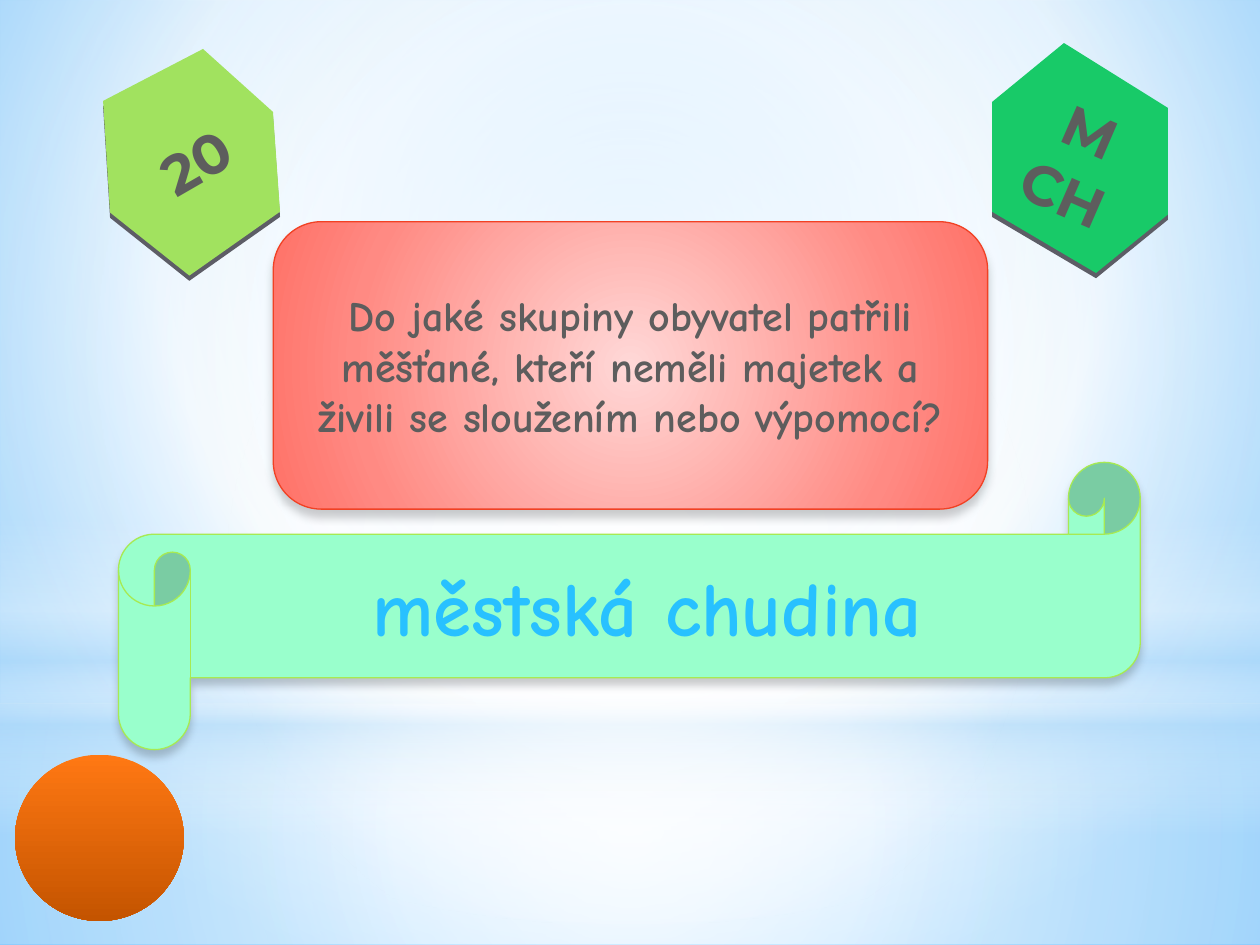
from typing import NamedTuple, Optional

from lxml import etree
from pptx import Presentation
from pptx.dml.color import RGBColor
from pptx.enum import shapes, text
from pptx.oxml import ns
from pptx.util import Pt

A = "http://schemas.openxmlformats.org/drawingml/2006/main"
SHAPE = shapes.MSO_SHAPE
GREY = "5D5D5D"
EDGE = "5D5D66"
EDGE_DEPTH = 3
CENTRE = (50, 50, 50, 50)


class Gradient(NamedTuple):
    """Stops are (position %, colour, opacity %); focus is left, top, right, bottom %."""
    stops: tuple
    focus: Optional[tuple] = None
    angle: int = 90


class Panel(NamedTuple):
    kind: int
    box: tuple
    fill: object
    line: Optional[str] = None
    shadow: bool = False
    adjustment: Optional[float] = None


class Label(NamedTuple):
    words: str
    size: int
    font: str
    colour: str


class Badge(NamedTuple):
    corners: tuple
    fill: str
    label: Label
    centre: tuple
    rotation: float


BACKDROP = Gradient(((0, "9ED5FF", 100), (60, "FFFFFF", 100), (100, "5BB9FF", 100)),
                    (20, 10, 20, 60))
GLOWS = [
    Panel(SHAPE.RECTANGLE, (0, 402, 720, 138), Gradient(
        ((0, "FFFFFF", 91), (37, "FFFFFF", 76), (100, "B4DCFA", 79)), CENTRE)),
    Panel(SHAPE.RECTANGLE, (0, 0, 720, 402), Gradient(
        ((0, "FFFFFF", 89), (48, "FFFFFF", 62), (100, "B4DCFA", 79)), CENTRE)),
    Panel(SHAPE.RECTANGLE, (0, 296.6, 720, 180), Gradient(
        ((0, "FFFFFF", 0), (29, "FFFFFF", 30), (45, "B4DCFA", 40),
         (55, "FFFFFF", 26), (65, "B4DCFA", 60), (100, "FFFFFF", 0)))),
    Panel(SHAPE.OVAL, (0, 126, 720, 402), Gradient(
        ((0, "FFFFFF", 100), (56, "FFFFFF", 0)), CENTRE)),
]
BADGES = [
    Badge(((608, 24.6), (667.4, 61.7), (667.4, 122.6), (626.3, 156), (566.9, 121), (566.9, 58.3)),
          "18CA68", Label("M CH", 32, "Montserrat", GREY), (615.5, 92.5), 23.5),
    Badge(((116, 28), (156, 64), (160, 121), (108.2, 157.5), (62.9, 121.5), (58.9, 57.7)),
          "A1E25F", Label("20", 32, "Montserrat", GREY), (112, 92), -30),
]
QUESTION = Panel(SHAPE.ROUNDED_RECTANGLE, (156.2, 126.7, 408.2, 164.2), Gradient(
    ((0, "FFD8D7", 100), (72, "FF8A83", 100), (100, "FF7167", 100)), CENTRE), "F14124", True)
QUESTION_TEXT = Label("Do jaké skupiny obyvatel patřili měšťané, kteří neměli majetek a "
                      "živili se sloužením nebo výpomocí?", 24, "Comic Neue", GREY)
BALL = Panel(SHAPE.OVAL, (8.6, 431.3, 96.5, 95), Gradient(
    ((0, "FF7813", 100), (100, "C45400", 100))))
ANSWER = Panel(SHAPE.HORIZONTAL_SCROLL, (67.7, 264.2, 583.9, 164.2), "99FFCC",
               "A7EA52", True, 0.25)
ANSWER_TEXT = Label("městská chudina", 44, "Comic Neue", "28C1FF")


def rgb(colour: str) -> RGBColor:
    return RGBColor.from_string(colour)


def add_node(parent, tag: str, **attributes):
    return etree.SubElement(parent, f"{{{A}}}{tag}",
                            {key: str(value) for key, value in attributes.items()})


def put_gradient(holder, gradient: Gradient) -> None:
    """Replace the solid fill inside holder by a gradient."""
    solid = holder.find(ns.qn("a:solidFill"))
    grad = etree.Element(f"{{{A}}}gradFill", rotWithShape="1")
    stops = add_node(grad, "gsLst")
    for position, colour, opacity in gradient.stops:
        stop = add_node(stops, "gs", pos=position * 1000)
        node = add_node(stop, "srgbClr", val=colour)
        if opacity < 100:
            add_node(node, "alpha", val=opacity * 1000)
    if gradient.focus:
        path = add_node(grad, "path", path="circle")
        sides = (side * 1000 for side in gradient.focus)
        add_node(path, "fillToRect", **dict(zip("ltrb", sides)))
    else:
        add_node(grad, "lin", ang=gradient.angle * 60000, scaled=0)
    holder.replace(solid, grad)


def style(sp, fill, line: Optional[str] = None, shadow: bool = False) -> None:
    sp.shadow.inherit = False
    sp.fill.solid()
    if isinstance(fill, Gradient):
        put_gradient(sp._element.spPr, fill)
    else:
        sp.fill.fore_color.rgb = rgb(fill)
    if line:
        sp.line.color.rgb = rgb(line)
        sp.line.width = Pt(0.75)
    else:
        sp.line.fill.background()
    if shadow:
        effects = sp._element.spPr.find(ns.qn("a:effectLst"))
        outer = add_node(effects, "outerShdw", blurRad=Pt(5), dist=Pt(4),
                         dir=90 * 60000, rotWithShape=0)
        add_node(add_node(outer, "srgbClr", val="000000"), "alpha", val=20000)


def add_panel(s, panel: Panel):
    sp = s.shapes.add_shape(panel.kind, *map(Pt, panel.box))
    if panel.adjustment is not None:
        sp.adjustments[0] = panel.adjustment
    style(sp, panel.fill, panel.line, panel.shadow)
    return sp


def write(sp, label: Label) -> None:
    tf = sp.text_frame
    tf.word_wrap = True
    tf.vertical_anchor = text.MSO_ANCHOR.MIDDLE
    p = tf.paragraphs[0]
    p.alignment = text.PP_ALIGN.CENTER
    r = p.add_run()
    r.text = label.words
    r.font.name = label.font
    r.font.size = Pt(label.size)
    r.font.bold = True
    r.font.color.rgb = rgb(label.colour)


def add_outline(s, corners, drop: float, fill: str) -> None:
    points = [(Pt(x), Pt(y + drop)) for x, y in corners]
    builder = s.shapes.build_freeform(*points[0])
    builder.add_line_segments(points[1:], close=True)
    style(builder.convert_to_shape(), fill)


def add_badge(s, badge: Badge) -> None:
    """Draw a tilted hexagon with a dark lower edge and a turned label."""
    add_outline(s, badge.corners, EDGE_DEPTH, EDGE)
    add_outline(s, badge.corners, 0, badge.fill)
    width, height = 72, 84
    x, y = badge.centre
    sp = s.shapes.add_textbox(Pt(x - width / 2), Pt(y - height / 2), Pt(width), Pt(height))
    sp.rotation = badge.rotation
    tf = sp.text_frame
    tf.margin_left = tf.margin_right = tf.margin_top = tf.margin_bottom = 0
    write(sp, badge.label)


def main() -> None:
    prs = Presentation()
    prs.slide_width, prs.slide_height = Pt(720), Pt(540)
    s = prs.slides.add_slide(prs.slide_layouts[6])
    s.background.fill.solid()
    put_gradient(s._element.find(".//" + ns.qn("p:bgPr")), BACKDROP)
    for glow in GLOWS:
        add_panel(s, glow)
    for badge in BADGES:
        add_badge(s, badge)
    write(add_panel(s, QUESTION), QUESTION_TEXT)
    add_panel(s, BALL)
    write(add_panel(s, ANSWER), ANSWER_TEXT)
    prs.save("out.pptx")


if __name__ == "__main__":
    main()
